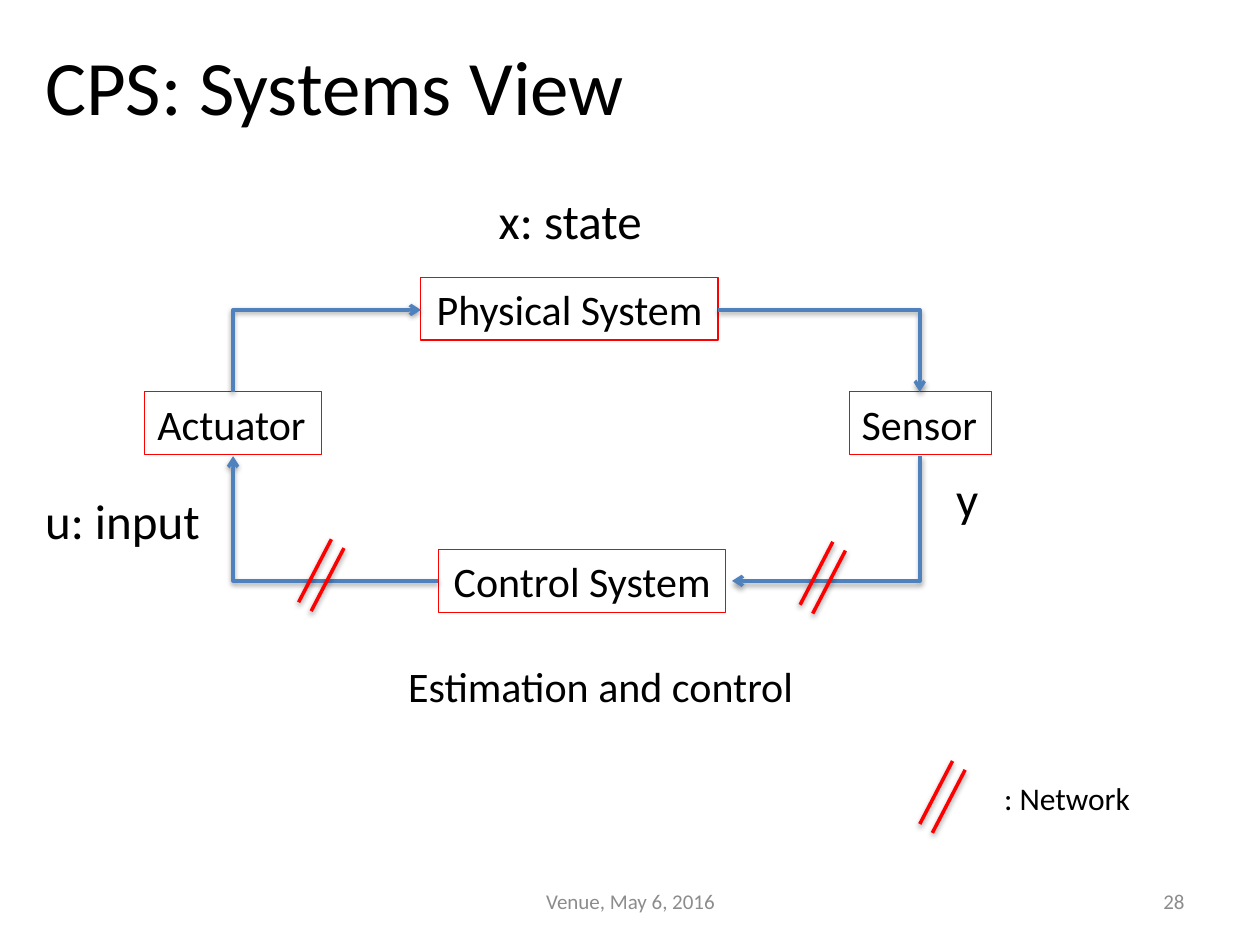
"""Build the CPS systems view slide: a control loop closed over a network."""
from lxml.etree import SubElement
from pptx import Presentation
from pptx.dml.color import RGBColor
from pptx.enum.shapes import MSO_CONNECTOR, MSO_SHAPE
from pptx.enum.text import MSO_ANCHOR, MSO_AUTO_SIZE, PP_ALIGN
from pptx.oxml import parse_xml
from pptx.oxml.ns import nsdecls, qn
from pptx.util import Inches, Pt

COLORS = {"text": "000000", "footer": "8C8C8C", "box": "FF0000",
          "network": "FF0000", "flow": "4F81BD"}
SHADOW = (f'<a:effectLst {nsdecls("a")}><a:outerShdw blurRad="40000" dist="20000" '
          'dir="5400000" rotWithShape="0"><a:srgbClr val="000000">'
          '<a:alpha val="38000"/></a:srgbClr></a:outerShdw></a:effectLst>')

prs = Presentation()
prs.slide_width, prs.slide_height = Inches(10), Inches(7.5)
s = prs.slides.add_slide(prs.slide_layouts[6])


def write(sp, text, size, color="text", align=PP_ALIGN.LEFT, fit=True):
    tf = sp.text_frame
    tf.text = text
    tf.word_wrap = not fit
    tf.auto_size = MSO_AUTO_SIZE.SHAPE_TO_FIT_TEXT if fit else MSO_AUTO_SIZE.NONE
    tf.vertical_anchor = MSO_ANCHOR.TOP if fit else MSO_ANCHOR.MIDDLE
    p = tf.paragraphs[0]
    p.alignment = align
    font = p.runs[0].font
    font.name, font.size = "Calibri", Pt(size)
    font.color.rgb = RGBColor.from_string(COLORS[color])


def add_line(kind, x1, y1, x2, y2, color):
    cx = s.shapes.add_connector(kind, Inches(x1), Inches(y1), Inches(x2), Inches(y2))
    cx.line.width = Pt(2)
    cx.line.color.rgb = RGBColor.from_string(COLORS[color])
    cx._element.spPr.append(parse_xml(SHADOW))
    return cx


for text, x, y, w, h, size, color, align in [
    ("CPS: Systems View", 0.26, 0.17, 5.71, 1.01, 44, "text", PP_ALIGN.LEFT),
    ("Venue, May 6, 2016", 3.42, 6.95, 3.17, 0.4, 12, "footer", PP_ALIGN.CENTER),
    ("28", 7.17, 6.95, 2.33, 0.4, 12, "footer", PP_ALIGN.RIGHT),
]:
    sp = s.shapes.add_textbox(Inches(x), Inches(y), Inches(w), Inches(h))
    write(sp, text, size, color, align, fit=False)

for text, x, y, w, align in [
    ("Physical System", 3.34, 2.2, 2.36, PP_ALIGN.CENTER),
    ("Sensor", 6.74, 3.11, 1.13, PP_ALIGN.LEFT),
    ("Control System", 3.48, 4.36, 2.28, PP_ALIGN.CENTER),
    ("Actuator", 1.15, 3.11, 1.4, PP_ALIGN.LEFT),
]:
    sp = s.shapes.add_shape(MSO_SHAPE.RECTANGLE, Inches(x), Inches(y), Inches(w), Inches(0.5))
    sp.shadow.inherit = False
    sp.fill.background()
    sp.line.color.rgb = RGBColor.from_string(COLORS["box"])
    sp.line.width = Pt(0.75)
    write(sp, text, 24, align=align)

for x1, y1, x2, y2, turn, flip in [
    (7.3, 3.62, 5.81, 4.61, 90, False),
    (5.7, 2.46, 7.3, 3.11, 0, False),
    (3.48, 4.61, 1.85, 3.62, 180, False),
    (1.85, 3.11, 3.34, 2.46, 90, True),
]:
    mx, my = (x1 + x2) / 2, (y1 + y2) / 2
    dx, dy = abs(x2 - x1) / 2, abs(y2 - y1) / 2
    if turn == 90:
        dx, dy = dy, dx
    cx = add_line(MSO_CONNECTOR.ELBOW, mx - dx, my - dy, mx + dx, my + dy, "flow")
    spPr = cx._element.spPr
    spPr.find(qn("a:prstGeom")).set("prst", "bentConnector2")
    xfrm = spPr.find(qn("a:xfrm"))
    xfrm.set("rot", str(turn * 60000))
    if flip:
        xfrm.set("flipH", "1")
        xfrm.set("flipV", "1")
    SubElement(spPr.find(qn("a:ln")), qn("a:tailEnd"), type="arrow")

for x, y in [(6.61, 4.3), (2.63, 4.28), (7.56, 6.04)]:
    for dx, dy in [(0, 0), (0.1, 0.07)]:
        add_line(MSO_CONNECTOR.STRAIGHT, x + dx, y + dy, x + dx - 0.26, y + dy + 0.5, "network")

for text, x, y, w, h, size in [
    ("y", 7.49, 3.67, 0.38, 0.57, 28),
    ("u: input", 0.26, 3.84, 1.44, 0.57, 28),
    ("x: state", 3.86, 1.46, 1.37, 0.57, 28),
    ("Estimation and control", 3.14, 5.19, 3.31, 0.5, 24),
    (": Network", 7.87, 6.13, 1.22, 0.4, 18),
]:
    sp = s.shapes.add_textbox(Inches(x), Inches(y), Inches(w), Inches(h))
    write(sp, text, size)

prs.save("out.pptx")
